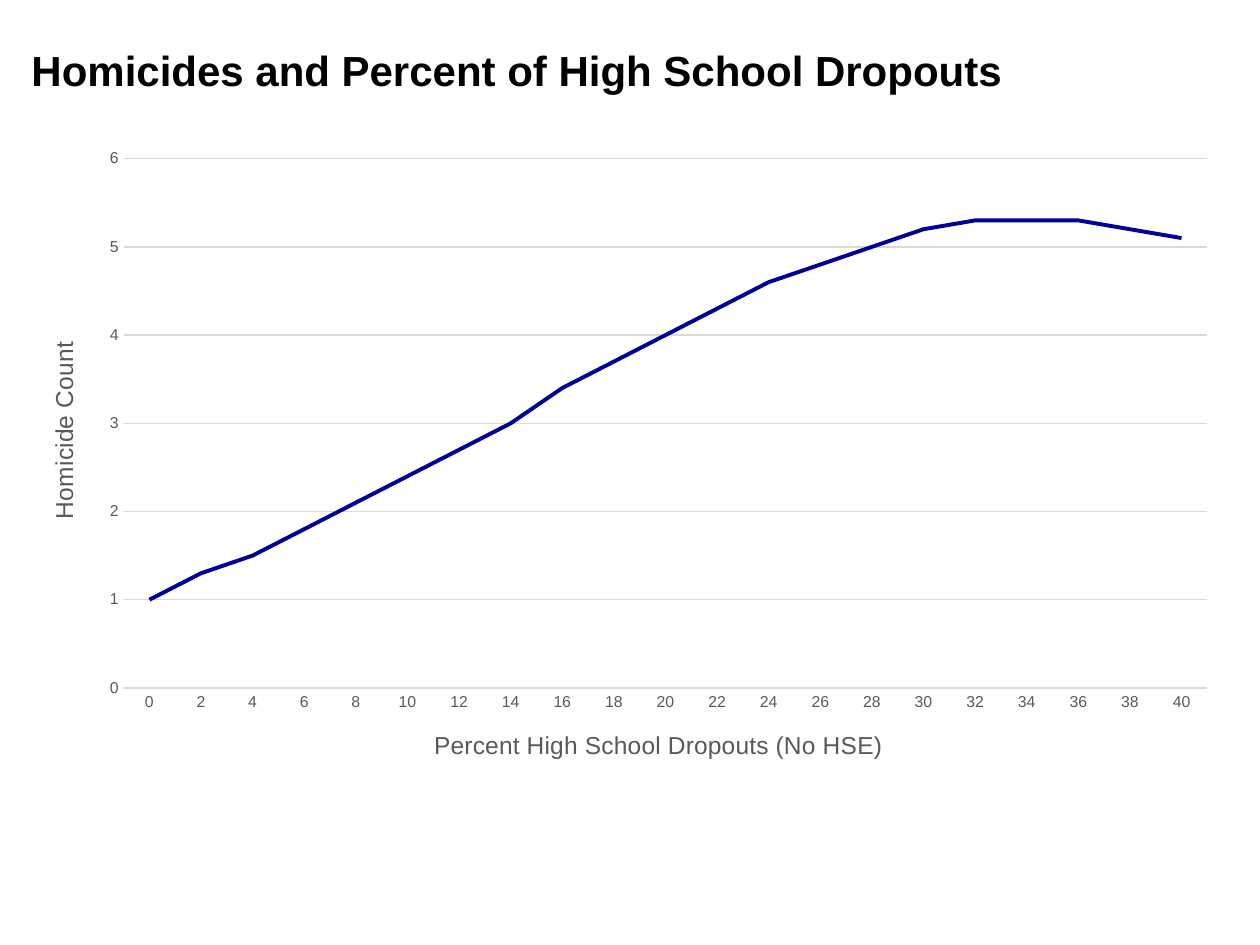
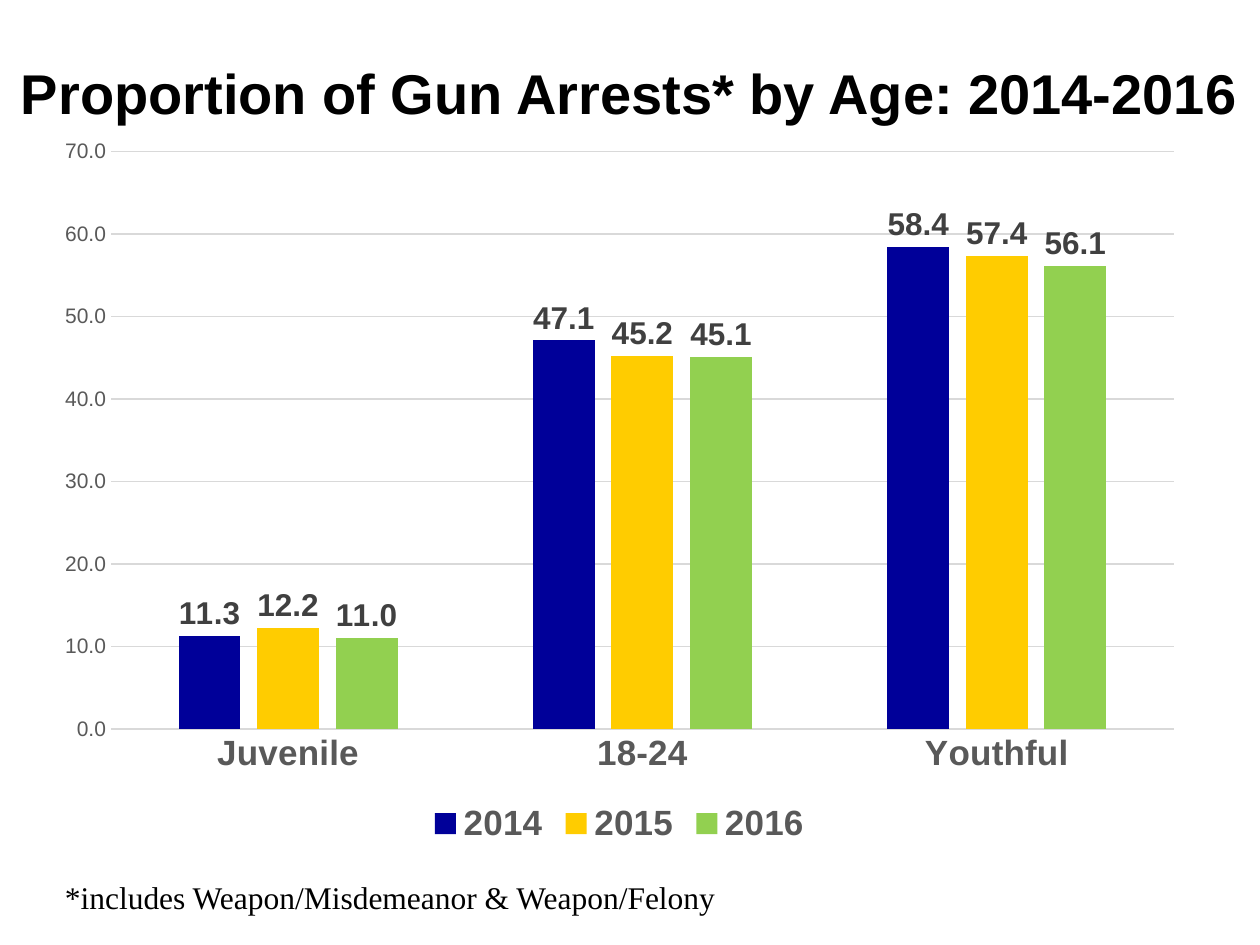
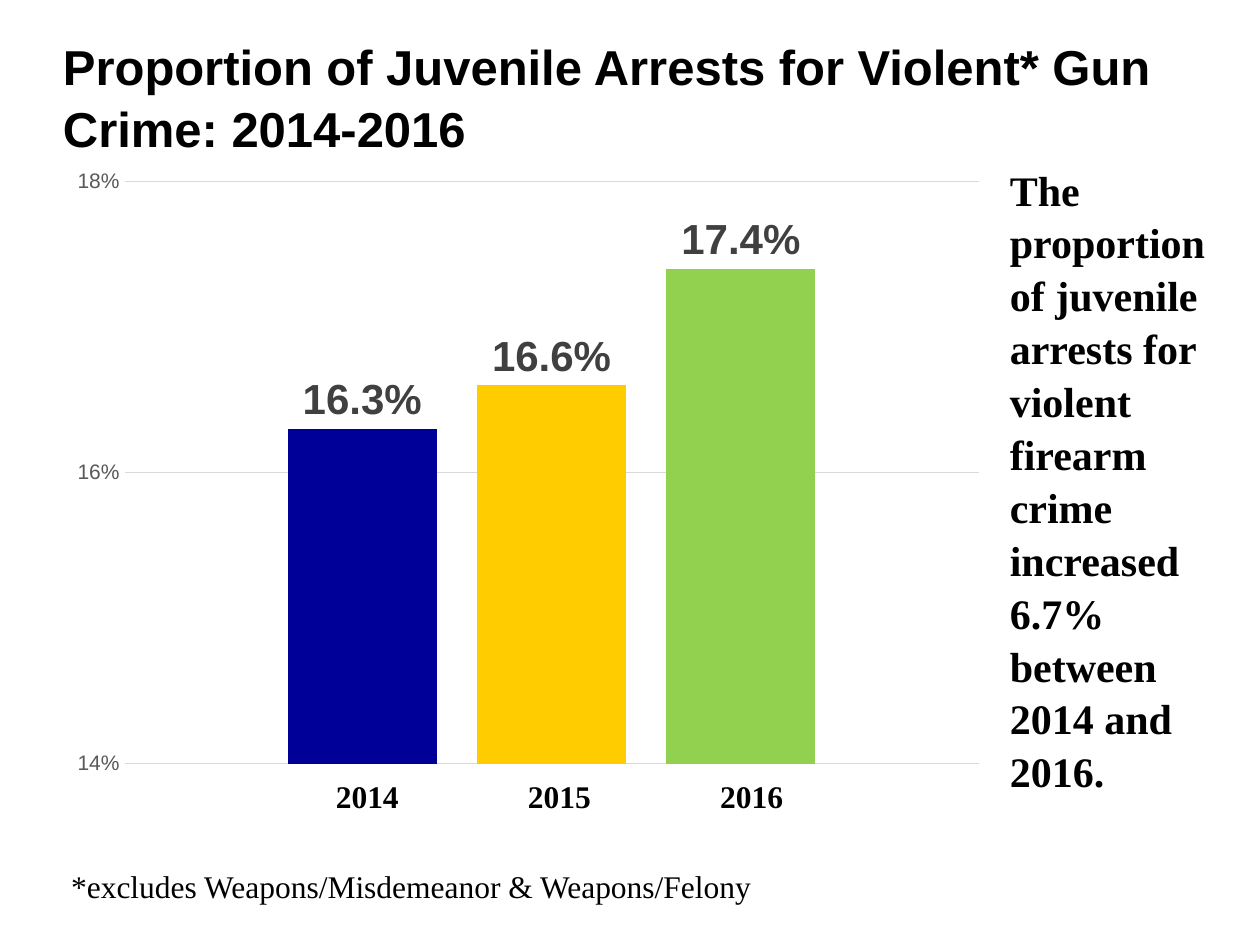
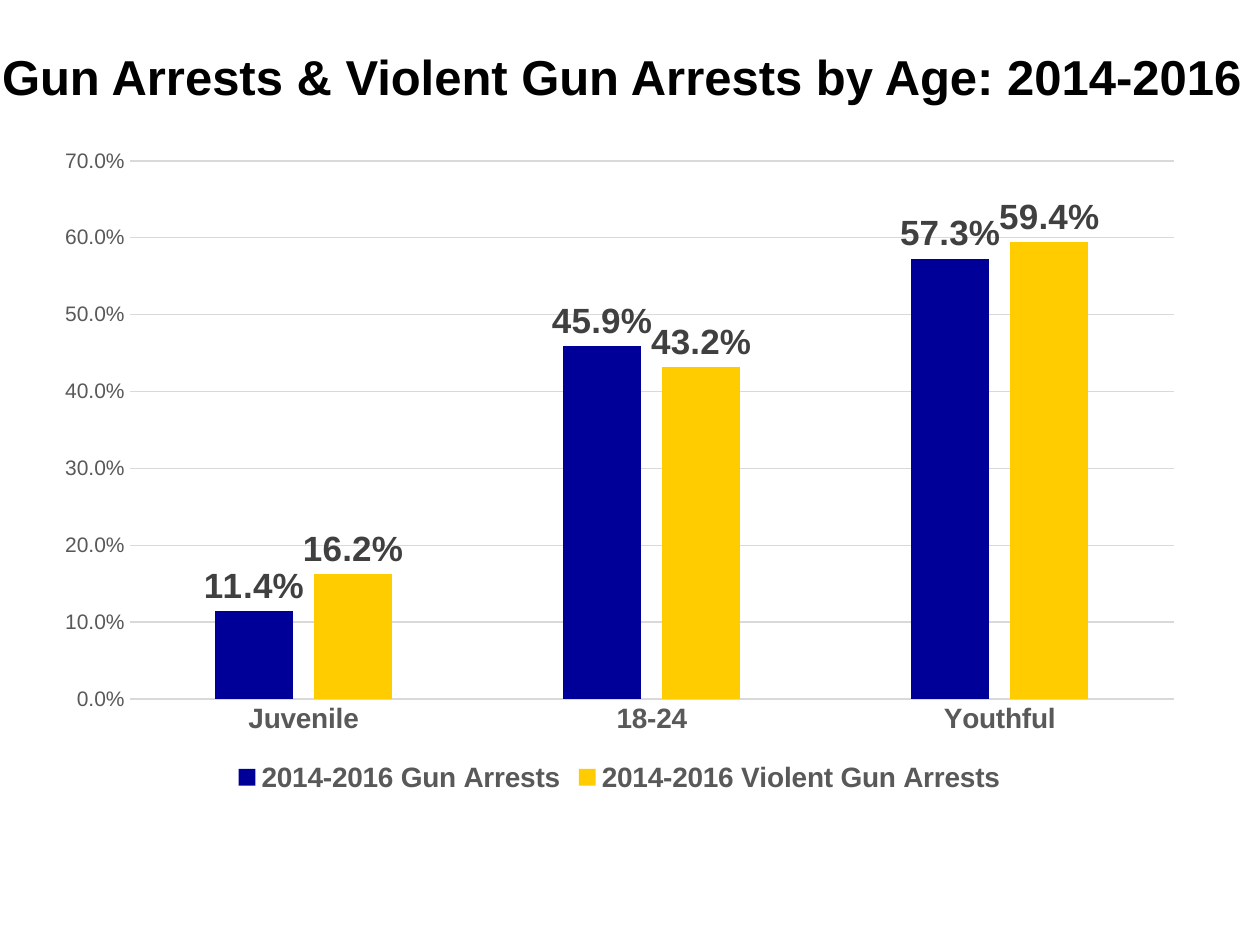
from pptx import Presentation
from pptx import util as u
from pptx.chart.data import CategoryChartData
from pptx.dml.color import RGBColor
from pptx.enum import chart as charts, shapes, text

COLUMNS, ROWS = 120, 90
SANS, SERIF = "Arial", "Times New Roman"
BLACK, WHITE, GREY, DARK_GREY, RULE = "000000", "FFFFFF", "595959", "404040", "D9D9D9"
NAVY, GOLD, GREEN = SERIES_COLORS = "000099", "FFCC00", "92D050"
AGES = ["Juvenile", "18-24", "Youthful"]


def color(value):
    """Turn a hex string into a colour."""
    return RGBColor.from_string(value)


def place(deck, left, top, width, height):
    """Convert grid columns and rows to slide lengths."""
    column, row = deck.slide_width / COLUMNS, deck.slide_height / ROWS
    return [round(n) for n in (left * column, top * row, width * column, height * row)]


def style_font(font, size, name=SANS, shade=BLACK, bold=False):
    """Set every font property used in the deck."""
    font.size, font.name, font.bold = u.Pt(size), name, bold
    font.color.rgb = color(shade)


def style_line(line, shade, width):
    """Give a line its colour and width."""
    line.color.rgb = color(shade)
    line.width = u.Pt(width)


def write(box, words, size, name, bold=False):
    """Fill a box with one left-aligned wrapped paragraph."""
    box.text_frame.word_wrap = True
    para = box.text_frame.paragraphs[0]
    para.text = words
    para.alignment = text.PP_ALIGN.LEFT
    para.line_spacing = 1.05 if bold else 1.0
    style_font(para.font, size, name, bold=bold)


def add_title_page(deck, words, size, area):
    """Add a blank page with a bold title resting on its box bottom."""
    page = deck.slides.add_slide(deck.slide_layouts[6])
    box = page.shapes.add_textbox(*place(deck, *area))
    frame = box.text_frame
    frame.margin_left = frame.margin_right = frame.margin_top = frame.margin_bottom = 0
    frame.vertical_anchor = text.MSO_ANCHOR.BOTTOM
    write(box, words, size, SANS, bold=True)
    return page


def add_note(deck, page, words, size, area):
    """Add bold serif text."""
    write(page.shapes.add_textbox(*place(deck, *area)), words, size, SERIF, bold=True)


def add_footnote(deck, page, words, area):
    """Add a white box with a serif footnote."""
    box = page.shapes.add_shape(shapes.MSO_SHAPE.RECTANGLE, *place(deck, *area))
    box.shadow.inherit = False
    box.fill.solid()
    box.fill.fore_color.rgb = color(WHITE)
    box.line.fill.background()
    write(box, words, 18, SERIF)


def add_chart(deck, page, kind, area, categories, series, number_format="General"):
    """Add a chart with plain axes and light horizontal rules."""
    data = CategoryChartData(number_format=number_format)
    data.categories = categories
    for name, values in series.items():
        data.add_series(name, values)
    chart = page.shapes.add_chart(kind, *place(deck, *area), data).chart
    style_font(chart.font, 10)
    chart.has_title = chart.has_legend = False
    for axis in (chart.category_axis, chart.value_axis):
        axis.major_tick_mark = axis.minor_tick_mark = charts.XL_TICK_MARK.NONE
    style_line(chart.category_axis.format.line, RULE, 0.75)
    chart.value_axis.format.line.fill.background()
    style_line(chart.value_axis.major_gridlines.format.line, RULE, 0.75)
    chart.value_axis.tick_labels.number_format = number_format
    chart.value_axis.tick_labels.number_format_is_linked = False
    chart.plots[0].vary_by_categories = False
    return chart


def add_line_chart(deck, page, area, categories, series, axis_titles):
    """Add a line chart with titled axes."""
    chart = add_chart(deck, page, charts.XL_CHART_TYPE.LINE, area, categories, series)
    for axis, words in zip((chart.category_axis, chart.value_axis), axis_titles):
        style_font(axis.tick_labels.font, 9, shade=GREY)
        para = axis.axis_title.text_frame.paragraphs[0]
        para.text = words
        style_font(para.font, 14, shade=GREY)
    line = chart.plots[0].series[0]
    line.smooth = False
    line.marker.style = charts.XL_MARKER_STYLE.NONE
    style_line(line.format.line, NAVY, 2.25)


def add_column_chart(deck, page, area, categories, series, label_size, label_format,
                     axis_format, category_size=None):
    """Add labelled columns, with a legend when categories are shown."""
    kind = charts.XL_CHART_TYPE.COLUMN_CLUSTERED
    chart = add_chart(deck, page, kind, area, categories, series, axis_format)
    plot = chart.plots[0]
    plot.gap_width, plot.overlap = 219, -27
    style_font(chart.value_axis.tick_labels.font, 12, shade=GREY)
    for column, shade in zip(plot.series, SERIES_COLORS):
        column.format.fill.solid()
        column.format.fill.fore_color.rgb = color(shade)
        labels = column.data_labels
        labels.show_value = True
        labels.position = charts.XL_LABEL_POSITION.OUTSIDE_END
        labels.number_format = label_format
        labels.number_format_is_linked = False
        style_font(labels.font, label_size, shade=DARK_GREY, bold=True)
    chart.category_axis.visible = chart.has_legend = bool(category_size)
    if category_size:
        chart.legend.position = charts.XL_LEGEND_POSITION.BOTTOM
        chart.legend.include_in_layout = False
        for font in (chart.category_axis.tick_labels.font, chart.legend.font):
            style_font(font, category_size, shade=GREY, bold=True)
    return chart


def add_dropout_page(deck):
    """Show homicides against the dropout rate."""
    page = add_title_page(deck, "Homicides and Percent of High School Dropouts", 24,
                          (3, 4, 114, 5))
    counts = [1, 1.3, 1.5, 1.8, 2.1, 2.4, 2.7, 3, 3.4, 3.7, 4, 4.3, 4.6, 4.8, 5,
              5.2, 5.3, 5.3, 5.3, 5.2, 5.1]
    percents = [str(percent) for percent in range(0, 41, 2)]
    add_line_chart(deck, page, (2, 13, 115.3, 62), percents, {"Homicides": counts},
                   ("Percent High School Dropouts (No HSE)", "Homicide Count"))


def add_gun_arrest_page(deck):
    """Show gun arrests by age and year."""
    page = add_title_page(deck, "Proportion of Gun Arrests* by Age: 2014-2016", 32,
                          (2, 4, 117, 8))
    shares = {"2014": [11.3, 47.1, 58.4], "2015": [12.2, 45.2, 57.4],
              "2016": [11, 45.1, 56.1]}
    add_column_chart(deck, page, (4, 12, 110, 69), AGES, shares, 18, "0.0", "0.0", 20)
    add_footnote(deck, page, "*includes Weapon/Misdemeanor & Weapon/Felony",
                 (5, 83, 64.5, 4.8))


def add_juvenile_page(deck):
    """Show the juvenile share of violent gun crime arrests."""
    page = add_title_page(
        deck, "Proportion of Juvenile Arrests for Violent* Gun Crime: 2014-2016", 28,
        (6, 6.6, 114, 8.4))
    shares = {"2014": [0.163], "2015": [0.166], "2016": [0.174]}
    chart = add_column_chart(deck, page, (5.6, 15, 89.4, 60), ["1"], shares, 24,
                             "0.0%", "0%")
    axis = chart.value_axis
    axis.minimum_scale, axis.maximum_scale, axis.major_unit = 0.14, 0.18, 0.02
    for index, year in enumerate(shares):
        add_note(deck, page, year, 18, (30.8 + 18.3 * index, 73.2, 9.2, 4.8))
    add_note(deck, page, "The proportion of juvenile arrests for violent firearm crime "
             "increased 6.7% between 2014 and 2016.", 24, (95, 14.8, 24, 59.4))
    add_footnote(deck, page, "*excludes Weapons/Misdemeanor & Weapons/Felony",
                 (5.6, 82, 73.7, 4.8))


def add_comparison_page(deck):
    """Compare all and violent gun arrests by age."""
    page = add_title_page(deck, "Gun Arrests & Violent Gun Arrests by Age: 2014-2016", 28,
                          (0.2, 5, 120, 5))
    shares = {"2014-2016 Gun Arrests": [0.114, 0.459, 0.573],
              "2014-2016 Violent Gun Arrests": [0.162, 0.432, 0.594]}
    add_column_chart(deck, page, (4, 13, 110, 63), AGES, shares, 20, "0.0%", "0.0%", 16)


def main():
    """Build and save the deck."""
    deck = Presentation()
    deck.slide_width, deck.slide_height = u.Inches(10), u.Inches(7.5)
    add_dropout_page(deck)
    add_gun_arrest_page(deck)
    add_juvenile_page(deck)
    add_comparison_page(deck)
    deck.save("out.pptx")


if __name__ == "__main__":
    main()
